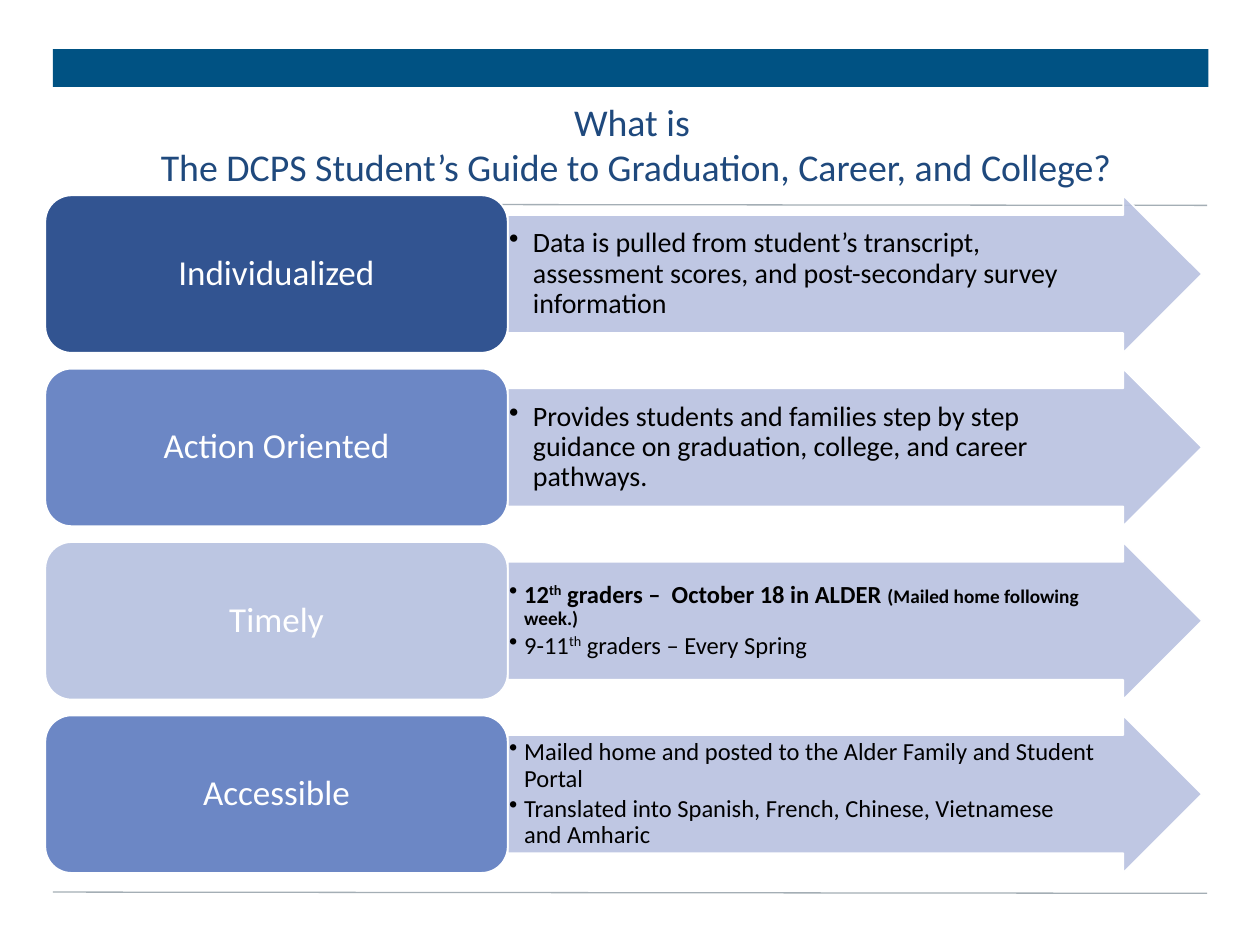
"""Build the slide that explains the student guide with four labelled arrows."""
from dataclasses import dataclass

from lxml import etree
from pptx import Presentation
from pptx.dml.color import RGBColor
from pptx.enum.shapes import MSO_CONNECTOR, MSO_SHAPE
from pptx.enum.text import MSO_ANCHOR, MSO_AUTO_SIZE, PP_ALIGN
from pptx.oxml.ns import qn
from pptx.util import Inches, Pt

RECTANGLE = MSO_SHAPE.RECTANGLE
ROUNDED = MSO_SHAPE.ROUNDED_RECTANGLE
ARROW = MSO_SHAPE.RIGHT_ARROW
STRAIGHT = MSO_CONNECTOR.STRAIGHT
CENTER = PP_ALIGN.CENTER
MIDDLE, BOTTOM = MSO_ANCHOR.MIDDLE, MSO_ANCHOR.BOTTOM
NO_AUTOFIT = MSO_AUTO_SIZE.NONE


@dataclass(frozen=True)
class Theme:
    font: str = "Calibri"
    band: str = "005283"
    rule: str = "A4AEB5"
    title: str = "1F497D"
    dark: str = "325491"
    mid: str = "6C87C5"
    light: str = "BCC6E2"
    arrow: str = "B9C2E1"
    white: str = "FFFFFF"
    black: str = "000000"
    title_size: float = 21.6
    label_size: float = 20
    large_size: float = 16
    small_size: float = 14
    note_size: float = 11


THEME = Theme()


def add_block(kind, left, top, width, height, fill, outline=None):
    block = slide.shapes.add_shape(
        kind, Inches(left), Inches(top), Inches(width), Inches(height))
    block.shadow.inherit = False
    block.fill.solid()
    block.fill.fore_color.rgb = RGBColor.from_string(fill)
    if outline:
        block.line.color.rgb = RGBColor.from_string(outline)
        block.line.width = Pt(1)
    else:
        block.line.fill.background()
    frame = block.text_frame
    frame.word_wrap = True
    frame.vertical_anchor = MIDDLE
    return block


def add_run(paragraph, text, size, color, bold=False, raised=False):
    run = paragraph.add_run()
    run.text = text
    run.font.name = THEME.font
    run.font.size = Pt(size)
    run.font.bold = bold
    run.font.color.rgb = RGBColor.from_string(color)
    if raised:
        run.font._element.set("baseline", "30000")


LARGE, SMALL, NOTE = THEME.large_size, THEME.small_size, THEME.note_size
QUALITIES = [
    ("Individualized", THEME.dark, 0.19, [
        [("Data is pulled from student’s transcript, assessment scores, "
          "and post-secondary survey information", LARGE, False, False)]]),
    ("Action Oriented", THEME.mid, 0.19, [
        [("Provides students and families step by step guidance on "
          "graduation, college, and career pathways.", LARGE, False, False)]]),
    ("Timely", THEME.light, 0.12, [
        [("12", SMALL, True, False), ("th", SMALL, True, True),
         (" graders –  October 18 in ALDER ", SMALL, True, False),
         ("(Mailed home following week.)", NOTE, True, False)],
        [("9-11", SMALL, False, False), ("th", SMALL, False, True),
         (" graders – Every Spring", SMALL, False, False)]]),
    ("Accessible", THEME.mid, 0.12, [
        [("Mailed home and posted to the Alder Family and Student Portal",
          SMALL, False, False)],
        [("Translated into Spanish, French, Chinese, Vietnamese  and Amharic",
          SMALL, False, False)]]),
]
FIRST_TOP, ROW_STEP, ROW_HEIGHT = 1.55, 1.376, 1.25
LABEL_LEFT, LABEL_WIDTH, ARROW_WIDTH = 0.36, 3.67, 5.51

presentation = Presentation()
presentation.slide_width = Inches(10)
presentation.slide_height = Inches(7.5)
slide = presentation.slides.add_slide(presentation.slide_layouts[5])

add_block(RECTANGLE, 0.42, 0.39, 9.17, 0.3, THEME.band)
for rule_top in (1.62, 7.08):
    rule = slide.shapes.add_connector(
        STRAIGHT, Inches(0.42), Inches(rule_top),
        Inches(9.58), Inches(rule_top + 0.01))
    rule.line.color.rgb = RGBColor.from_string(THEME.rule)
    rule.line.width = Pt(0.75)
    etree.SubElement(rule._element.spPr, qn("a:effectLst"))

title = slide.shapes.title
title.left, title.top = Inches(0.46), Inches(0.74)
title.width, title.height = Inches(9.18), Inches(0.81)
heading = title.text_frame
heading.auto_size = NO_AUTOFIT
heading.word_wrap = True
heading.vertical_anchor = BOTTOM
heading.margin_left = heading.margin_right = Inches(0.05)
heading.margin_top = heading.margin_bottom = Inches(0.05)
question = heading.paragraphs[0]
question.alignment = CENTER
add_run(question, "What is ", THEME.title_size, THEME.title)
question.add_line_break()
add_run(question, "The DCPS Student’s Guide to Graduation, Career, and College?",
        THEME.title_size, THEME.title)

for row, (quality, color, indent, points) in enumerate(QUALITIES):
    top = FIRST_TOP + row * ROW_STEP
    arrow = add_block(ARROW, LABEL_LEFT + LABEL_WIDTH, top, ARROW_WIDTH,
                      ROW_HEIGHT, THEME.arrow, THEME.white)
    arrow.adjustments[0], arrow.adjustments[1] = 0.75, 0.5
    tint = arrow._element.spPr.find(qn("a:solidFill"))[0]
    etree.SubElement(tint, qn("a:alpha"), val="90000")
    details = arrow.text_frame
    details.margin_left = details.margin_top = details.margin_bottom = Inches(0.01)
    details.margin_right = Inches(0.32)
    for index, runs in enumerate(points):
        point = details.add_paragraph() if index else details.paragraphs[0]
        point.level = 1
        point.alignment = PP_ALIGN.LEFT
        point.line_spacing = 0.9
        point.space_after = Pt(round(runs[0][1] * 0.15, 1))
        properties = point._p.get_or_add_pPr()
        properties.set("marL", str(Inches(indent)))
        properties.set("indent", str(-Inches(indent)))
        etree.SubElement(properties, qn("a:buChar"), char="•")
        for text, size, bold, raised in runs:
            add_run(point, text, size, THEME.black, bold, raised)

    label = add_block(ROUNDED, LABEL_LEFT, top, LABEL_WIDTH, ROW_HEIGHT,
                      color, THEME.white)
    label.text_frame.margin_left = label.text_frame.margin_right = Inches(0.08)
    label.text_frame.margin_top = label.text_frame.margin_bottom = Inches(0.04)
    name = label.text_frame.paragraphs[0]
    name.alignment = CENTER
    name.line_spacing = 0.9
    add_run(name, quality, THEME.label_size, THEME.white)

presentation.save("out.pptx")
